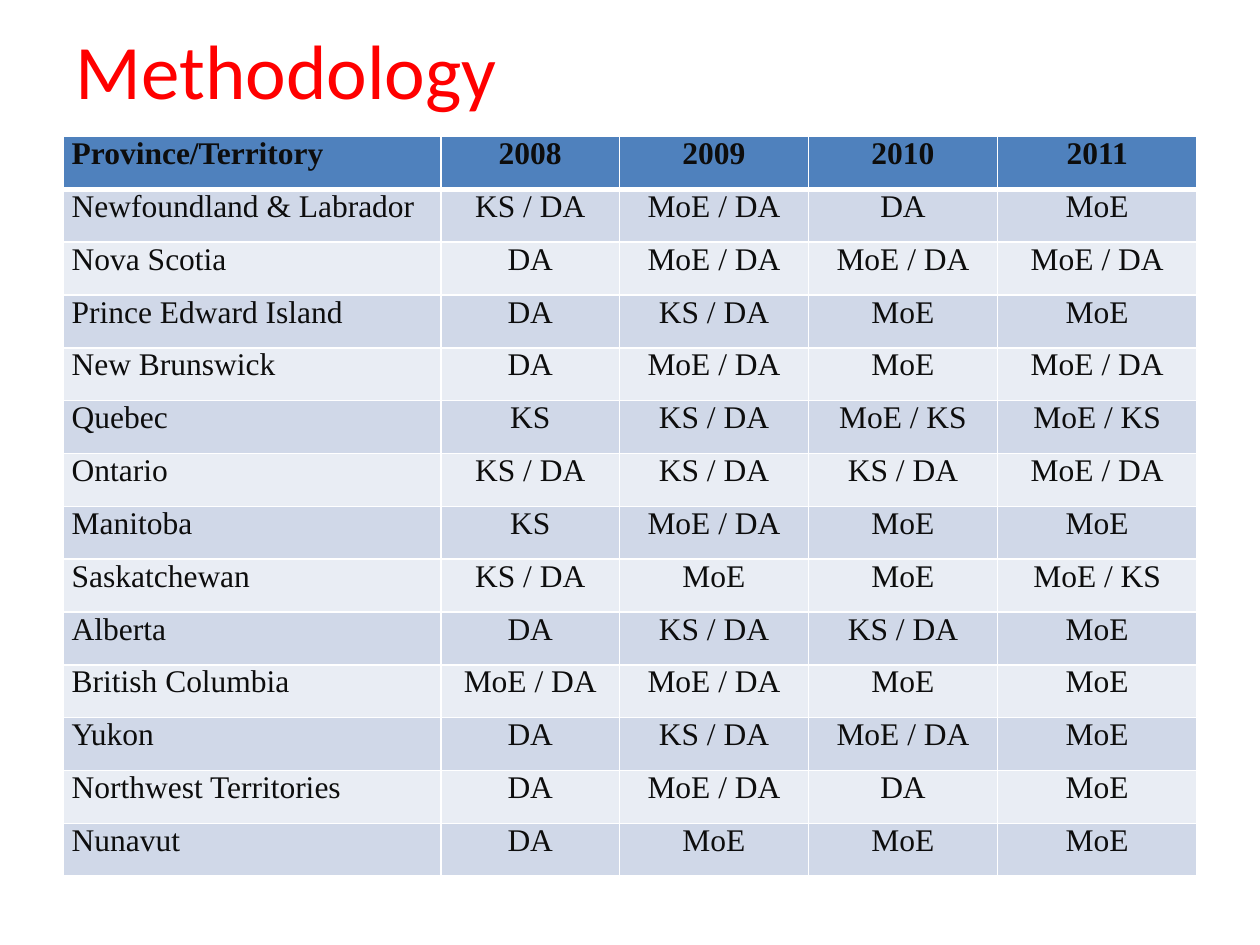
from lxml import etree
from pptx import Presentation
from pptx import util as u
from pptx.dml.color import RGBColor
from pptx.enum import text
from pptx.oxml.ns import qn

THEME = {
    "title": {"name": "Calibri", "size": u.Pt(44), "bold": False},
    "title_color": "FF0000",
    "header": {"name": "Times New Roman", "size": u.Pt(18), "bold": True},
    "body": {"name": "Times New Roman", "size": u.Pt(18), "bold": False},
    "cell_color": "0D0D0D",
    "header_fill": "4F81BD",
    "band_fills": ("E9EDF4", "D0D8E8"),
    "border": "FFFFFF",
}

YEARS = ["2008", "2009", "2010", "2011"]
METHODS = {
    "Newfoundland & Labrador": ["KS / DA", "MoE / DA", "DA", "MoE"],
    "Nova Scotia": ["DA", "MoE / DA", "MoE / DA", "MoE / DA"],
    "Prince Edward Island": ["DA", "KS / DA", "MoE", "MoE"],
    "New Brunswick": ["DA", "MoE / DA", "MoE", "MoE / DA"],
    "Quebec": ["KS", "KS / DA", "MoE / KS", "MoE / KS"],
    "Ontario": ["KS / DA", "KS / DA", "KS / DA", "MoE / DA"],
    "Manitoba": ["KS", "MoE / DA", "MoE", "MoE"],
    "Saskatchewan": ["KS / DA", "MoE", "MoE", "MoE / KS"],
    "Alberta": ["DA", "KS / DA", "KS / DA", "MoE"],
    "British Columbia": ["MoE / DA", "MoE / DA", "MoE", "MoE"],
    "Yukon": ["DA", "KS / DA", "MoE / DA", "MoE"],
    "Northwest Territories": ["DA", "MoE / DA", "DA", "MoE"],
    "Nunavut": ["DA", "MoE", "MoE", "MoE"],
}
ROWS = [["Province/Territory", *YEARS]]
ROWS += [[province, *methods] for province, methods in METHODS.items()]
COLUMN_WIDTHS = [216, 102, 108, 108, 114]
ROW_HEIGHT = 30.19


def format_paragraph(paragraph, font_format, color, alignment):
    paragraph.alignment = alignment
    font = paragraph.runs[0].font
    for name, value in font_format.items():
        setattr(font, name, value)
    font.color.rgb = RGBColor.from_string(color)


def add_border(cell, side, width):
    line = etree.SubElement(cell._tc.get_or_add_tcPr(), qn(f"a:ln{side}"), w=str(u.Pt(width)))
    fill = etree.SubElement(line, qn("a:solidFill"))
    etree.SubElement(fill, qn("a:srgbClr"), val=THEME["border"])


presentation = Presentation()
presentation.slide_width, presentation.slide_height = u.Pt(720), u.Pt(540)
slide = presentation.slides.add_slide(presentation.slide_layouts[5])

# Title
title = slide.shapes.title
title_box = {"left": u.Pt(36), "top": u.Pt(0), "width": u.Pt(648), "height": u.Pt(78)}
for name, value in title_box.items():
    setattr(title, name, value)
title.text_frame.text = "Methodology"
title.text_frame.vertical_anchor = text.MSO_ANCHOR.MIDDLE
format_paragraph(title.text_frame.paragraphs[0], THEME["title"],
                 THEME["title_color"], text.PP_ALIGN.LEFT)

# Table grid
table = slide.shapes.add_table(
    len(ROWS), len(COLUMN_WIDTHS), u.Pt(36), u.Pt(78),
    u.Pt(sum(COLUMN_WIDTHS)), u.Pt(ROW_HEIGHT * len(ROWS))).table
for column, width in zip(table.columns, COLUMN_WIDTHS):
    column.width = u.Pt(width)
for row in table.rows:
    row.height = u.Pt(ROW_HEIGHT)

# Cells: a header row with a heavy rule below it, then banded rows
cell_format = {"margin_left": u.Pt(5), "margin_right": u.Pt(5), "margin_top": 0,
               "margin_bottom": 0, "vertical_anchor": text.MSO_ANCHOR.TOP}
for row_index, values in enumerate(ROWS):
    is_header = row_index == 0
    fill_color = THEME["header_fill"] if is_header else THEME["band_fills"][row_index % 2]
    border_widths = {"L": 1, "R": 1, "T": 3 if row_index == 1 else 1, "B": 3 if is_header else 1}
    for column_index, value in enumerate(values):
        cell = table.cell(row_index, column_index)
        cell.text = value
        for name, setting in cell_format.items():
            setattr(cell, name, setting)
        for side, width in border_widths.items():
            add_border(cell, side, width)
        cell.fill.solid()
        cell.fill.fore_color.rgb = RGBColor.from_string(fill_color)
        alignment = text.PP_ALIGN.CENTER if column_index else text.PP_ALIGN.LEFT
        format_paragraph(cell.text_frame.paragraphs[0],
                         THEME["header" if is_header else "body"],
                         THEME["cell_color"], alignment)

presentation.save("out.pptx")
